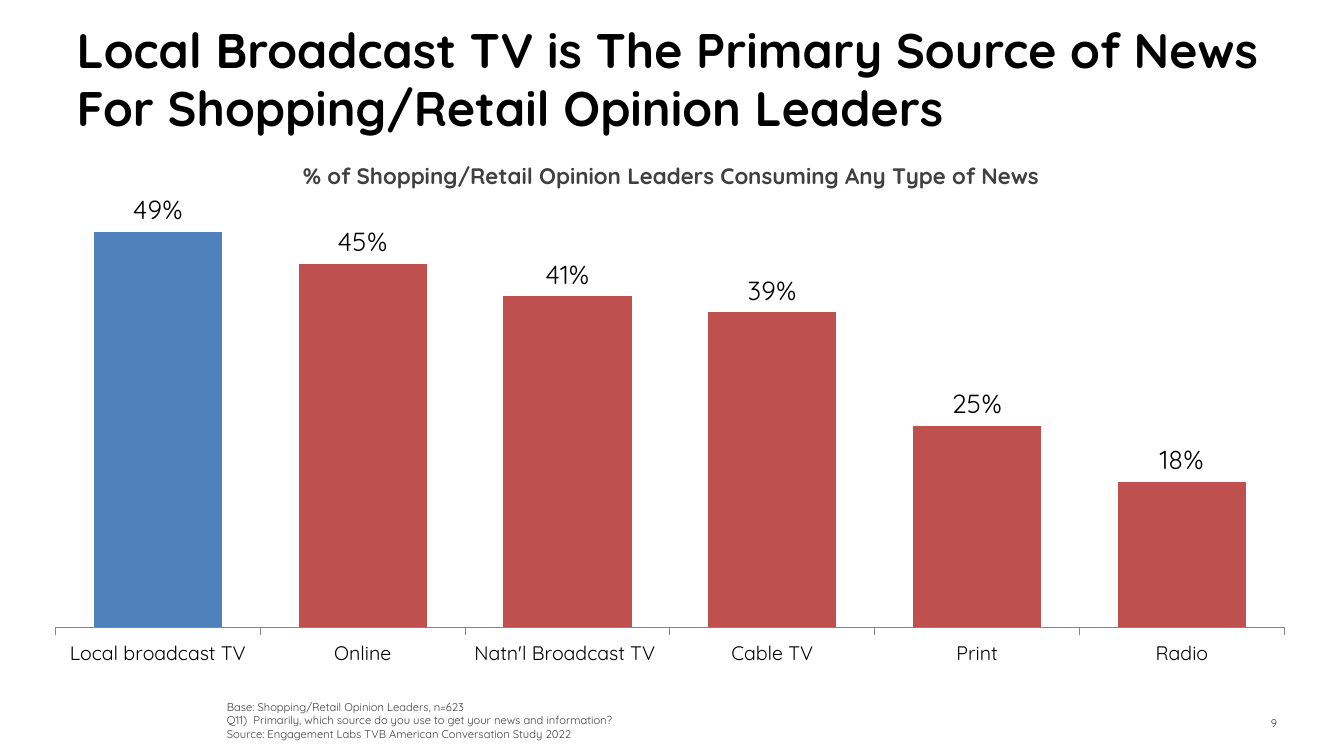
from lxml import etree
from pptx import Presentation
from pptx.chart.data import CategoryChartData
from pptx.dml.color import RGBColor
from pptx.enum.chart import XL_CHART_TYPE, XL_LABEL_POSITION, XL_TICK_MARK
from pptx.enum.text import MSO_ANCHOR, MSO_AUTO_SIZE, PP_ALIGN
from pptx.util import Inches, Pt

COLUMNS = XL_CHART_TYPE.COLUMN_CLUSTERED
LABEL_ABOVE = XL_LABEL_POSITION.OUTSIDE_END
TICK_OUT, TICK_NONE = XL_TICK_MARK.OUTSIDE, XL_TICK_MARK.NONE
TOP, MIDDLE, BOTTOM = MSO_ANCHOR.TOP, MSO_ANCHOR.MIDDLE, MSO_ANCHOR.BOTTOM
LEFT, CENTER, RIGHT = PP_ALIGN.LEFT, PP_ALIGN.CENTER, PP_ALIGN.RIGHT
NO_FIT = MSO_AUTO_SIZE.NONE
FONT = "Quicksand"
BLACK, GRAY = "000000", "404040"
RED, BLUE = "C0504D", "4F81BD"


def rgb(color):
    return RGBColor.from_string(color)


def write(box, lines, place, frame_format, align, size, color, bold=False):
    """Place a text shape and fill it with one paragraph per line."""
    box.left, box.top, box.width, box.height = map(Inches, place)
    frame = box.text_frame
    for name, value in frame_format.items():
        setattr(frame, name, value)
    frame.text = "\n".join(lines)
    for para in frame.paragraphs:
        para.alignment = align
        for span in para.runs:
            for name, value in {"name": FONT, "size": Pt(size), "bold": bold}.items():
                setattr(span.font, name, value)
            span.font.color.rgb = rgb(color)


deck = Presentation()
deck.slide_width = Inches(10)
deck.slide_height = deck.slide_width * 9 // 16
page = deck.slides.add_slide(deck.slide_layouts[5])

write(page.shapes.title,
      ["Local Broadcast TV is The Primary Source of News For Shopping/Retail Opinion Leaders"],
      (0.47, 0.15, 9.26, 0.89),
      {"word_wrap": True, "auto_size": NO_FIT, "vertical_anchor": TOP, "margin_top": 0},
      LEFT, 26, BLACK, bold=True)

# News source chart
data = CategoryChartData(number_format="0%")
data.categories = ["Local broadcast TV", "Online", "Natn'l Broadcast TV ", "Cable TV", "Print", "Radio"]
data.add_series("Series 1", [0.49, 0.45, 0.41, 0.39, 0.25, 0.18])
chart = page.shapes.add_chart(
    COLUMNS, Inches(0.41), Inches(1.29), Inches(9.15), Inches(3.93), data).chart
chart.has_legend = False
chart.has_title = False
chart.font.name, chart.font.size = FONT, Pt(18)
chart.font.color.rgb = rgb(BLACK)

category_axis = chart.category_axis
category_axis.major_tick_mark = TICK_OUT
category_axis.minor_tick_mark = TICK_NONE
category_axis.tick_labels.font.size = Pt(10.5)
category_axis.format.line.color.rgb = rgb("868686")
category_axis.format.line.width = Pt(0.5)

value_axis = chart.value_axis
value_axis.visible = False
value_axis.has_major_gridlines = False
value_axis.minimum_scale, value_axis.maximum_scale = 0, 0.51

plot = chart.plots[0]
plot.gap_width = 60
plot.vary_by_categories = False
bars = plot.series[0]
bars.format.fill.solid()
bars.format.fill.fore_color.rgb = rgb(RED)
local_bar = bars.points[0].format.fill
local_bar.solid()
local_bar.fore_color.rgb = rgb(BLUE)

labels = bars.data_labels
labels.show_value = True
labels.number_format, labels.number_format_is_linked = "0%", False
labels.position = LABEL_ABOVE
labels.font.size = Pt(14)

# Bars span the full chart width, with room left for the category labels
plot_area = plot._element.getparent()
namespace = etree.QName(plot_area).namespace
for old_layout in plot_area.findall(f"{{{namespace}}}layout"):
    plot_area.remove(old_layout)
layout = etree.Element(f"{{{namespace}}}layout")
manual = etree.SubElement(layout, f"{{{namespace}}}manualLayout")
for name, value in {"layoutTarget": "inner", "xMode": "edge", "yMode": "edge",
                    "x": 0, "y": 0.08, "w": 1, "h": 0.78}.items():
    etree.SubElement(manual, f"{{{namespace}}}{name}", val=str(value))
plot_area.insert(0, layout)

# Chart heading, source notes and page number
texts = [
    (["% of Shopping/Retail Opinion Leaders Consuming Any Type of News"],
     (2.13, 1.16, 5.73, 0.3), False, TOP, CENTER, 12, GRAY, True),
    (["Base: Shopping/Retail Opinion Leaders, n=623",
      "Q11)  Primarily, which source do you use to get your news and information?",
      "Source: Engagement Labs TVB American Conversation Study 2022"],
     (1.59, 5.16, 8.15, 0.4), True, BOTTOM, LEFT, 6, GRAY, False),
    (["9"], (9.04, 5.22, 0.59, 0.3), True, MIDDLE, RIGHT, 6, "3C3C3A", False),
]
for lines, place, wrap, anchor, align, size, color, bold in texts:
    box = page.shapes.add_textbox(*map(Inches, place))
    write(box, lines, place, {"word_wrap": wrap, "vertical_anchor": anchor},
          align, size, color, bold)

# The page number ends in a slightly larger space
space = box.text_frame.paragraphs[0].add_run()
space.text = " "
space.font.name, space.font.size = FONT, Pt(8)

deck.save("out.pptx")
